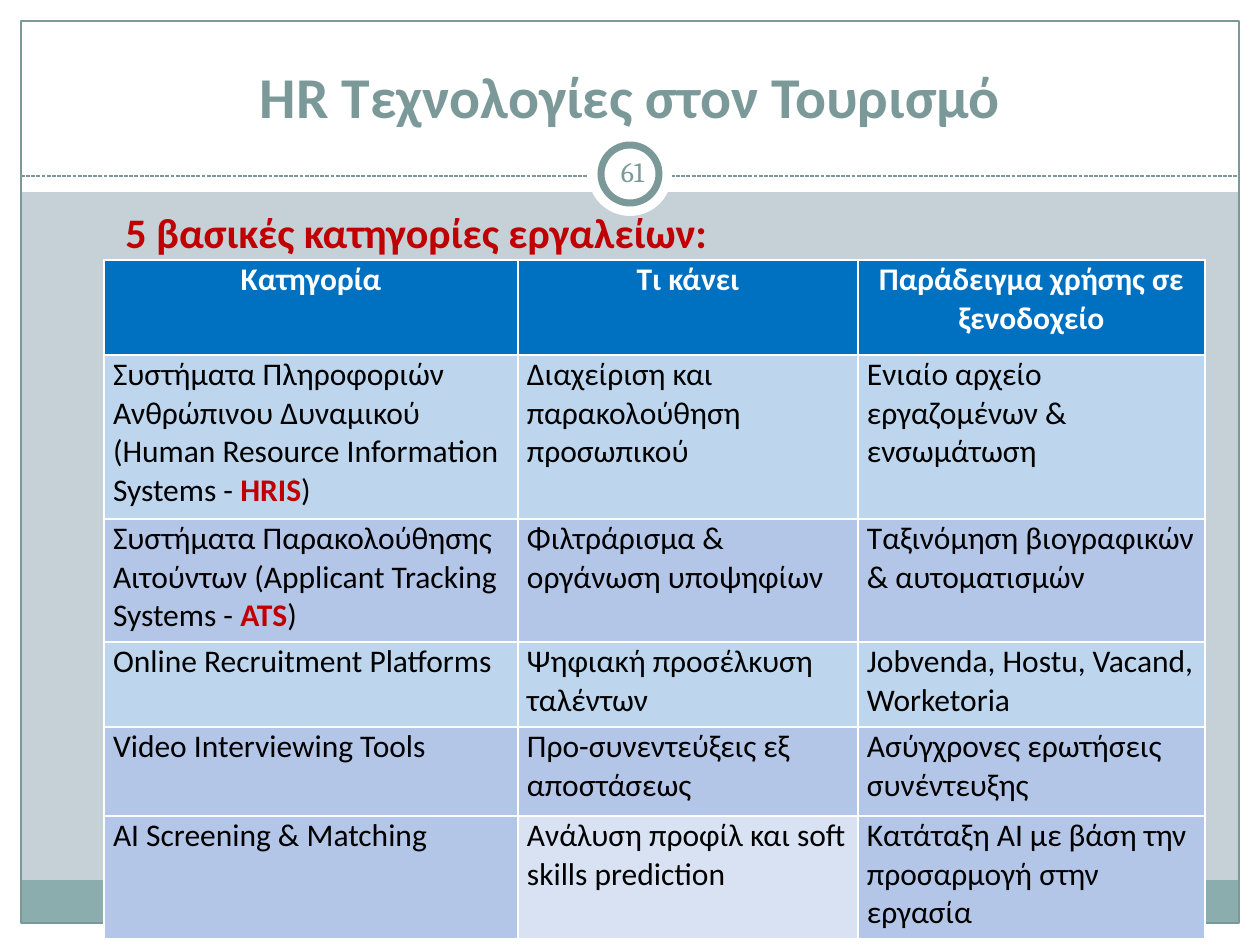
"""Build the slide on HR technologies in tourism."""
import dataclasses
import typing

import lxml.etree
import pptx
import pptx.dml.color
import pptx.enum.dml
import pptx.enum.shapes
import pptx.enum.text
import pptx.oxml
import pptx.oxml.ns
import pptx.util

SHAPE = pptx.enum.shapes.MSO_SHAPE
ALIGN = pptx.enum.text.PP_ALIGN
ANCHOR = pptx.enum.text.MSO_ANCHOR
WHITE, TEAL, RED, BLACK = "FFFFFF", "7C999A", "C00000", "000000"
BLUE, SKY, PERIWINKLE, PALE = "0070C0", "BDD6EE", "B4C6E7", "D9E2F3"
SIDES = "left", "top", "right", "bottom"


@dataclasses.dataclass
class Panel:
    box: tuple[int, int, int, int]
    fill: str | None = WHITE
    line: str | None = None
    width: float = 0.75
    kind: int = SHAPE.RECTANGLE


@dataclasses.dataclass
class Label:
    text: str
    box: tuple[int, int, int, int]
    font: dict[str, typing.Any]
    color: str
    frame: dict[str, typing.Any]
    para: dict[str, typing.Any]


@dataclasses.dataclass
class Row:
    height: int
    cells: tuple[str, str, str]
    fills: tuple[str, str, str]
    accent: str = ""
    header: bool = False


def px(n: int) -> int:
    return round(n * 914400 / 126)


def rgb(color: str) -> pptx.dml.color.RGBColor:
    return pptx.dml.color.RGBColor.from_string(color)


def assign(obj: typing.Any, values: dict[str, typing.Any]) -> None:
    for name, value in values.items():
        setattr(obj, name, value)


def add_run(p: typing.Any, text: str, font: dict[str, typing.Any], color: str) -> None:
    r = p.add_run()
    r.text = text
    assign(r.font, font)
    r.font.color.rgb = rgb(color)


def add_panel(s: typing.Any, panel: Panel) -> None:
    sp = s.shapes.add_shape(panel.kind, *map(px, panel.box))
    sp.shadow.inherit = False
    if panel.fill:
        sp.fill.solid()
        sp.fill.fore_color.rgb = rgb(panel.fill)
    else:
        sp.fill.background()
    if panel.line:
        sp.line.color.rgb = rgb(panel.line)
        sp.line.width = pptx.util.Pt(panel.width)
    else:
        sp.line.fill.background()


def add_divider(s: typing.Any, x1: int, x2: int, y: int) -> None:
    kind = pptx.enum.shapes.MSO_CONNECTOR.STRAIGHT
    sp = s.shapes.add_connector(kind, px(x1), px(y), px(x2), px(y))
    sp.line.color.rgb = rgb(TEAL)
    sp.line.width = pptx.util.Pt(0.75)
    sp.line.dash_style = pptx.enum.dml.MSO_LINE.SQUARE_DOT
    lxml.etree.SubElement(sp._element.spPr, pptx.oxml.ns.qn("a:effectLst"))


def add_label(s: typing.Any, label: Label) -> None:
    tf = s.shapes.add_textbox(*map(px, label.box)).text_frame
    assign(tf, {"word_wrap": True, **label.frame})
    p = tf.paragraphs[0]
    assign(p, label.para)
    add_run(p, label.text, label.font, label.color)


def add_borders(cell: typing.Any) -> None:
    tcPr = cell._tc.get_or_add_tcPr()
    for side in "LRTB":
        tcPr.append(pptx.oxml.parse_xml(
            f'<a:ln{side} {pptx.oxml.ns.nsdecls("a")} w="12700"><a:solidFill>'
            f'<a:srgbClr val="{WHITE}"/></a:solidFill></a:ln{side}>'))


def fill_cell(cell: typing.Any, text: str, fill: str, row: Row) -> None:
    add_borders(cell)
    cell.fill.solid()
    cell.fill.fore_color.rgb = rgb(fill)
    margins = {"margin_left": px(9), "margin_right": px(9), "margin_top": 0, "margin_bottom": 0}
    assign(cell, margins)
    p = cell.text_frame.paragraphs[0]
    assign(p, {"line_spacing": 1.01, "alignment": ALIGN.CENTER if row.header else ALIGN.LEFT})
    font = {"name": "Calibri", "size": pptx.util.Pt(18), "bold": row.header}
    color = WHITE if row.header else BLACK
    if row.accent and row.accent in text:
        before, after = text.split(row.accent)
        add_run(p, before, font, color)
        add_run(p, row.accent, {**font, "bold": True}, RED)
        add_run(p, after, font, color)
    else:
        add_run(p, text, font, color)


def add_grid(s: typing.Any, x: int, y: int, widths: list[int], rows: list[Row]) -> None:
    size = sum(widths), sum(row.height for row in rows)
    table = s.shapes.add_table(len(rows), len(widths), px(x), px(y), *map(px, size)).table
    for column, width in zip(table.columns, widths):
        column.width = px(width)
    for i, row in enumerate(rows):
        table.rows[i].height = px(row.height)
        for j, (text, fill) in enumerate(zip(row.cells, row.fills)):
            fill_cell(table.cell(i, j), text, fill, row)


PANELS = [
    Panel((0, 924, 1260, 21)),
    Panel((0, 0, 1260, 192)),
    Panel((0, 0, 21, 945)),
    Panel((1239, 0, 21, 945)),
    Panel((21, 880, 1218, 43), "8CADAE"),
    Panel((21, 21, 1218, 902), None, TEAL),
]
BADGE = [
    Panel((588, 132, 84, 84), kind=SHAPE.OVAL),
    Panel((601, 145, 58, 58), WHITE, TEAL, 4, SHAPE.OVAL),
]
LABELS = [
    Label("HR Τεχνολογίες στον Τουρισμό", (42, 32, 1176, 104),
          {"name": "Calibri", "size": pptx.util.Pt(33), "bold": True}, TEAL,
          {"vertical_anchor": ANCHOR.BOTTOM}, {"alignment": ALIGN.CENTER}),
    Label("5 βασικές κατηγορίες εργαλείων:", (113, 200, 1053, 60),
          {"name": "Calibri", "size": pptx.util.Pt(24), "bold": True}, RED,
          {"vertical_anchor": ANCHOR.TOP}, {"space_before": pptx.util.Pt(4.8)}),
    Label("61", (601, 141, 63, 60), {"name": "Cambria", "size": pptx.util.Pt(16)}, TEAL,
          {"vertical_anchor": ANCHOR.MIDDLE, **{f"margin_{side}": px(6) for side in SIDES}},
          {"alignment": ALIGN.CENTER}),
]
ROWS = [
    Row(95, ("Κατηγορία", "Τι κάνει", "Παράδειγμα χρήσης σε ξενοδοχείο"),
        (BLUE,) * 3, header=True),
    Row(164, ("Συστήματα Πληροφοριών Ανθρώπινου Δυναμικού "
              "(Human Resource Information Systems - HRIS)",
              "Διαχείριση και παρακολούθηση προσωπικού",
              "Ενιαίο αρχείο εργαζομένων & ενσωμάτωση"), (SKY,) * 3, "HRIS"),
    Row(123, ("Συστήματα Παρακολούθησης Αιτούντων (Applicant Tracking Systems - ATS)",
              "Φιλτράρισμα & οργάνωση υποψηφίων",
              "Ταξινόμηση βιογραφικών & αυτοματισμών"), (PERIWINKLE,) * 3, "ATS"),
    Row(85, ("Online Recruitment Platforms", "Ψηφιακή προσέλκυση ταλέντων",
             "Jobvenda, Hostu, Vacand, Worketoria"), (SKY,) * 3),
    Row(89, ("Video Interviewing Tools", "Προ-συνεντεύξεις εξ αποστάσεως",
             "Ασύγχρονες ερωτήσεις συνέντευξης"), (PERIWINKLE,) * 3),
    Row(123, ("AI Screening & Matching", "Ανάλυση προφίλ και soft skills prediction",
              "Κατάταξη AI με βάση την προσαρμογή στην εργασία"),
        (PERIWINKLE, PALE, PERIWINKLE)),
]


def main() -> None:
    prs = pptx.Presentation()
    assign(prs, {"slide_width": px(1260), "slide_height": px(945)})
    s = prs.slides.add_slide(prs.slide_layouts[6])
    s.background.fill.solid()
    s.background.fill.fore_color.rgb = rgb("C5D1D7")
    for panel in PANELS:
        add_panel(s, panel)
    add_divider(s, 21, 1239, 176)
    for panel in BADGE:
        add_panel(s, panel)
    for label in LABELS:
        add_label(s, label)
    add_grid(s, 104, 260, [414, 340, 347], ROWS)
    prs.save("out.pptx")


if __name__ == "__main__":
    main()
